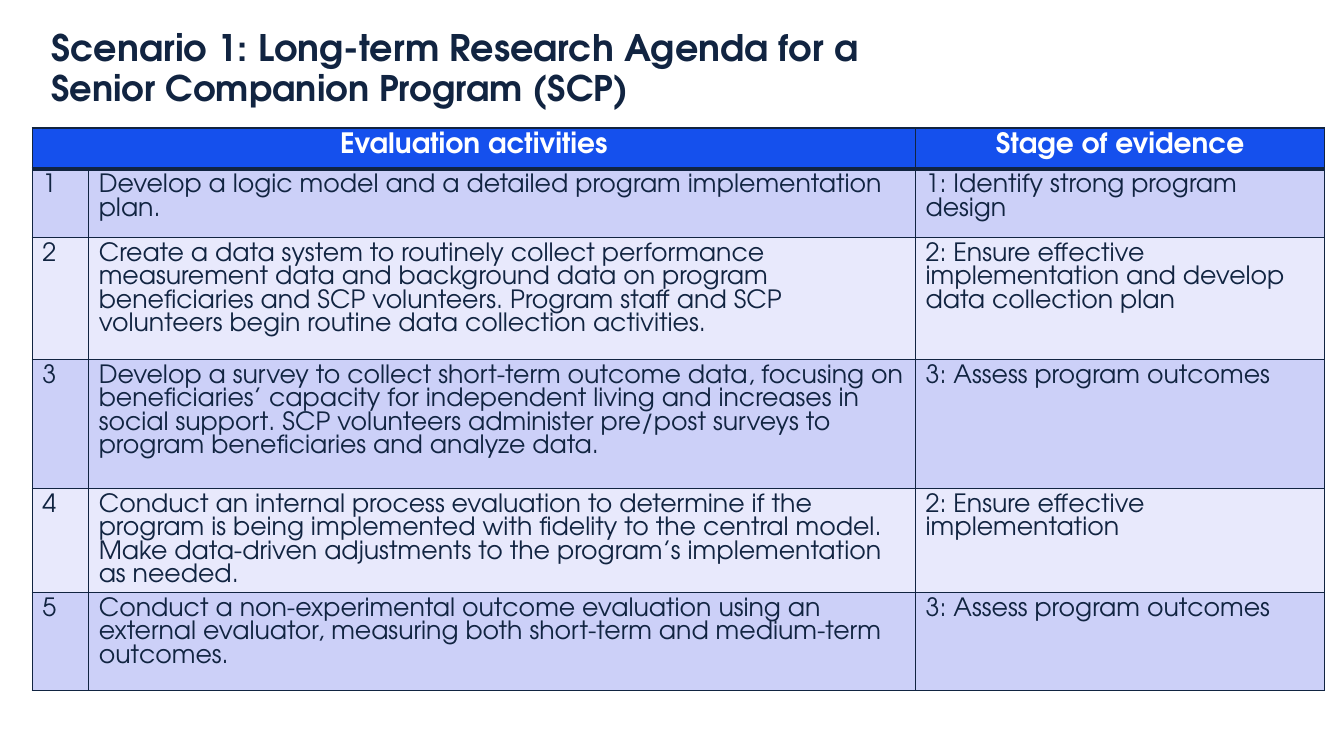
from typing import NamedTuple

from lxml.etree import SubElement
from pptx import Presentation
from pptx.dml.color import RGBColor
from pptx.enum.text import MSO_ANCHOR as Anchor, PP_ALIGN as Align
from pptx.oxml.ns import qn
from pptx.table import _Cell as Cell
from pptx.text.text import TextFrame
from pptx.util import Inches, Pt

FONT = "TeX Gyre Adventor"
NAVY = RGBColor(0x11, 0x24, 0x41)
BLUE = RGBColor(0x15, 0x50, 0xED)
LILAC = RGBColor(0xCC, 0xD0, 0xF8)
PALE = RGBColor(0xE8, 0xE9, 0xFC)
WHITE = RGBColor(0xFF, 0xFF, 0xFF)

SLIDE_WIDTH, SLIDE_HEIGHT = Inches(13.33), Inches(7.5)
GRID_COLUMNS, GRID_ROWS = 1333, 750
COLUMN_SPANS = (56, 820, 406)
HEADER_ROWS = 41


class Activity(NamedTuple):
    text: str
    stage: str
    grid_rows: int


ACTIVITIES = (
    Activity("Develop a logic model and a detailed program implementation plan.",
             "1: Identify strong program design", 68),
    Activity("Create a data system to routinely collect performance measurement data "
             "and background data on program beneficiaries and SCP volunteers. Program "
             "staff and SCP volunteers begin routine data collection activities.",
             "2: Ensure effective implementation and develop data collection plan", 121),
    Activity("Develop a survey to collect short-term outcome data, focusing on "
             "beneficiaries’ capacity for independent living and increases in social "
             "support. SCP volunteers administer pre/post surveys to program "
             "beneficiaries and analyze data.",
             "3: Assess program outcomes", 128),
    Activity("Conduct an internal process evaluation to determine if the program is "
             "being implemented with fidelity to the central model. Make data-driven "
             "adjustments to the program’s implementation as needed.",
             "2: Ensure effective implementation", 103),
    Activity("Conduct a non-experimental outcome evaluation using an external "
             "evaluator, measuring both short-term and medium-term outcomes.",
             "3: Assess program outcomes", 97),
)


def across(columns: float) -> int:
    return round(SLIDE_WIDTH * columns / GRID_COLUMNS)


def down(rows: float) -> int:
    return round(SLIDE_HEIGHT * rows / GRID_ROWS)


def add_text(frame: TextFrame, text: str, *, size: float, leading: float,
             color: RGBColor = NAVY, bold: bool = False,
             align: Align = Align.LEFT) -> None:
    """Append a run to the frame's first paragraph; leading is in points."""
    paragraph = frame.paragraphs[0]
    paragraph.alignment = align
    paragraph.line_spacing = Pt(leading)
    run = paragraph.add_run()
    run.text = text
    run.font.name = FONT
    run.font.size = Pt(size)
    run.font.bold = bold
    run.font.color.rgb = color


def style_cell(cell: Cell, fill: RGBColor, top: float = 1, bottom: float = 1) -> None:
    """Set the borders, which must come before the fill, and then the fill."""
    properties = cell._tc.get_or_add_tcPr()
    for side, width in (("L", 1), ("R", 1), ("T", top), ("B", bottom)):
        line = SubElement(properties, qn(f"a:ln{side}"), w=str(Pt(width)))
        solid = SubElement(line, qn("a:solidFill"))
        SubElement(solid, qn("a:srgbClr"), val=str(NAVY))
    cell.fill.solid()
    cell.fill.fore_color.rgb = fill


def main() -> None:
    presentation = Presentation()
    presentation.slide_width, presentation.slide_height = SLIDE_WIDTH, SLIDE_HEIGHT
    slide = presentation.slides.add_slide(presentation.slide_layouts[6])

    title = slide.shapes.add_textbox(across(51), down(62), across(903), down(46)).text_frame
    title.word_wrap = True
    title.vertical_anchor = Anchor.BOTTOM
    title.margin_left = title.margin_right = title.margin_top = title.margin_bottom = 0
    for text, size in (("Scenario 1: Long-term Research Agenda for a ", 26.1),
                       ("Senior Companion Program (SCP)", 25.2)):
        add_text(title, text, size=size, leading=28.6, bold=True)

    row_spans = [HEADER_ROWS] + [activity.grid_rows for activity in ACTIVITIES]
    table = slide.shapes.add_table(
        len(row_spans), len(COLUMN_SPANS), across(32), down(127),
        across(sum(COLUMN_SPANS)), down(sum(row_spans))).table
    for column, span in zip(table.columns, COLUMN_SPANS):
        column.width = across(span)
    for row, span in zip(table.rows, row_spans):
        row.height = down(span)

    table.cell(0, 0).merge(table.cell(0, 1))
    for cell in table.rows[0].cells:
        style_cell(cell, BLUE, bottom=3)
    for column, heading in ((0, "Evaluation activities"), (2, "Stage of evidence")):
        add_text(table.cell(0, column).text_frame, heading, size=20, leading=18.6,
                 color=WHITE, bold=True, align=Align.CENTER)

    for number, activity in enumerate(ACTIVITIES, start=1):
        texts = (str(number), activity.text, activity.stage)
        for cell, text in zip(table.rows[number].cells, texts):
            style_cell(cell, LILAC if number % 2 else PALE, top=3 if number == 1 else 1)
            add_text(cell.text_frame, text, size=18, leading=16.75)

    presentation.save("out.pptx")


if __name__ == "__main__":
    main()
